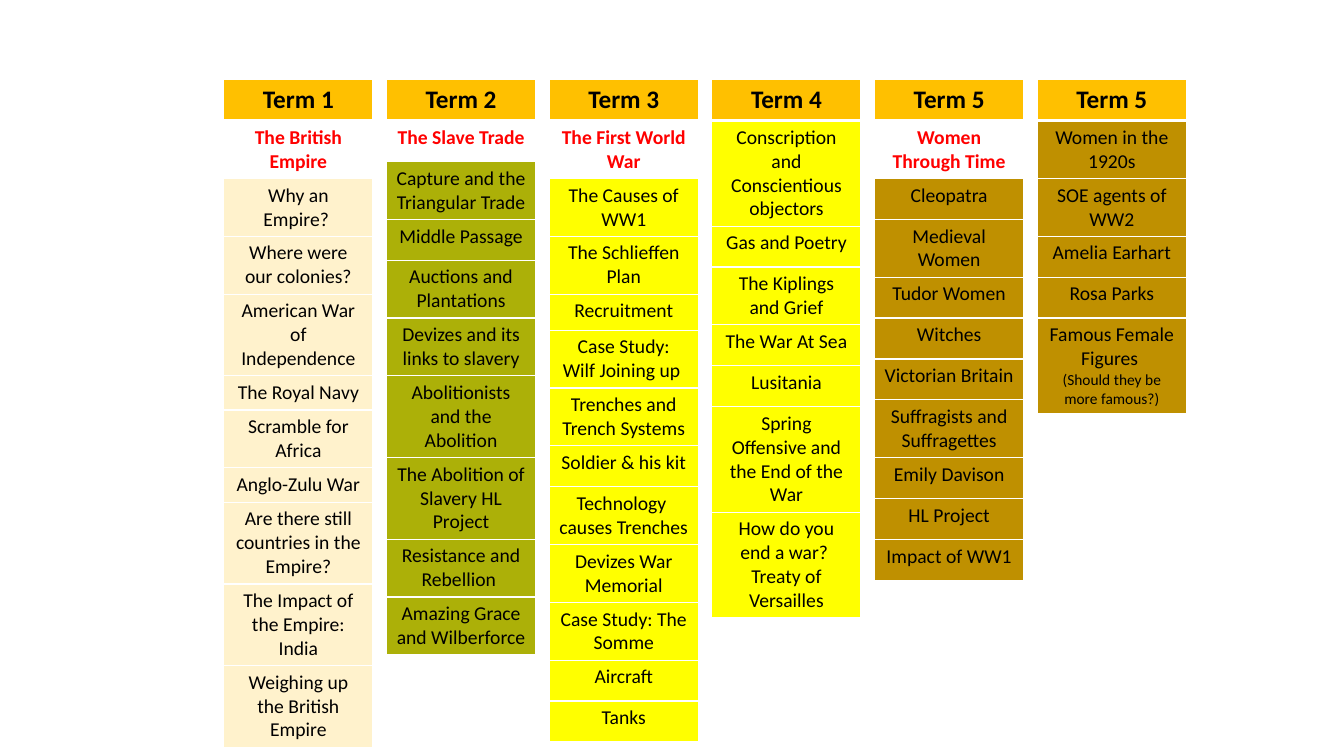
from lxml.etree import SubElement
from pptx import Presentation
from pptx.dml.color import RGBColor
from pptx.enum.text import PP_ALIGN as Align
from pptx.oxml.ns import qn
from pptx.util import Cm, Pt

COLOURS = {
    "header": "FFC000", "white": "FFFFFF", "black": "000000", "red": "FF0000",
    "cream": "FFF2CC", "olive": "ACB008", "yellow": "FFFF00", "bronze": "BF9000",
}
TERMS = [
    ("Term 1", "The British Empire", "cream", 16.66, [
        "Why an Empire? ", "Where were our colonies?", "American War of Independence",
        "The Royal Navy", "Scramble for Africa", "Anglo-Zulu War",
        "Are there still countries in the Empire?", "The Impact of the Empire: India",
        "Weighing up the British Empire"]),
    ("Term 2", "The Slave Trade", "olive", 14.94, [
        "Capture and the Triangular Trade", "Middle Passage", "Auctions and Plantations",
        "Devizes and its links to slavery", "Abolitionists and the Abolition",
        "The Abolition of Slavery HL Project", "Resistance and Rebellion ",
        "Amazing Grace and Wilberforce"]),
    ("Term 3", "The First World War", "yellow", 16.56, [
        "The Causes of WW1", "The Schlieffen Plan", "Recruitment",
        "Case Study: Wilf Joining up ", "Trenches and Trench Systems", "Soldier & his kit",
        "Technology  causes Trenches", "Devizes War Memorial", "Case Study: The Somme",
        "Aircraft", "Tanks"]),
    ("Term 4", None, "yellow", 13.44, [
        "Conscription and Conscientious objectors", "Gas and Poetry",
        "The Kiplings and Grief", "The War At Sea", "Lusitania",
        "Spring Offensive and the End of the War",
        "How do you end a war?  Treaty of Versailles"]),
    ("Term 5", "Women Through Time", "bronze", 12.55, [
        "Cleopatra", "Medieval Women", "Tudor Women", "Witches", "Victorian Britain",
        "Suffragists and Suffragettes", "Emily Davison", "HL Project", "Impact of WW1"]),
    ("Term 5", None, "bronze", 8.33, [
        "Women in the 1920s", "SOE agents of WW2", "Amelia Earhart", "Rosa Parks",
        "Famous Female Figures \n(Should they be more famous?)"]),
]
ROW_HEIGHT = 1.03
LOW_ROWS = {
    "The Royal Navy": 0.86, "Anglo-Zulu War": 0.87, "Recruitment": 0.91,
    "Resistance and Rebellion ": 0.74, "Amazing Grace and Wilberforce": 0.74,
}
LEFT, TOP, PITCH, WIDTH = 5.64, 2.01, 4.1, 3.76
HEADER_SIZE, TOPIC_SIZE, NOTE_SIZE = 18, 14, 11
THIN, THICK = 1, 3


def colour(name):
    return RGBColor.from_string(COLOURS[name])


def add_borders(cell, top, bottom):
    properties = cell._tc.get_or_add_tcPr()
    for side, width in (("L", THIN), ("R", THIN), ("T", top), ("B", bottom)):
        line = SubElement(properties, qn(f"a:ln{side}"), w=str(Pt(width)))
        fill = SubElement(line, qn("a:solidFill"))
        SubElement(fill, qn("a:srgbClr"), val=COLOURS["white"])


def fill_cell(cell, text, fill, size, ink="black", bold=False):
    cell.fill.solid()
    cell.fill.fore_color.rgb = colour(fill)
    cell.text_frame.text = text
    for index, paragraph in enumerate(cell.text_frame.paragraphs):
        paragraph.alignment = Align.CENTER
        for run in paragraph.runs:
            run.font.name = "Calibri"
            run.font.size = Pt(NOTE_SIZE if index else size)
            run.font.bold = bold
            run.font.color.rgb = colour(ink)


def add_term(slide, left, term, theme, fill, height, topics):
    rows = [(term, "header", HEADER_SIZE, "black", True)]
    if theme:
        rows.append((theme, "white", TOPIC_SIZE, "red", True))
    rows += [(topic, fill, TOPIC_SIZE) for topic in topics]
    frame = slide.shapes.add_table(len(rows), 1, Cm(left), Cm(TOP), Cm(WIDTH), Cm(height))
    table = frame.table
    table.horz_banding = False
    for index, row in enumerate(rows):
        table.rows[index].height = Cm(LOW_ROWS.get(row[0], ROW_HEIGHT))
        cell = table.cell(index, 0)
        add_borders(cell, THICK if index == 1 else THIN, THICK if index == 0 else THIN)
        fill_cell(cell, *row)
    frame.height = Cm(height)


def main():
    """Build the slide of history topics by term."""
    presentation = Presentation()
    presentation.slide_width, presentation.slide_height = Cm(33.87), Cm(19.05)
    slide = presentation.slides.add_slide(presentation.slide_layouts[6])
    for index, term in enumerate(TERMS):
        add_term(slide, LEFT + index * PITCH, *term)
    presentation.save("out.pptx")


if __name__ == "__main__":
    main()
